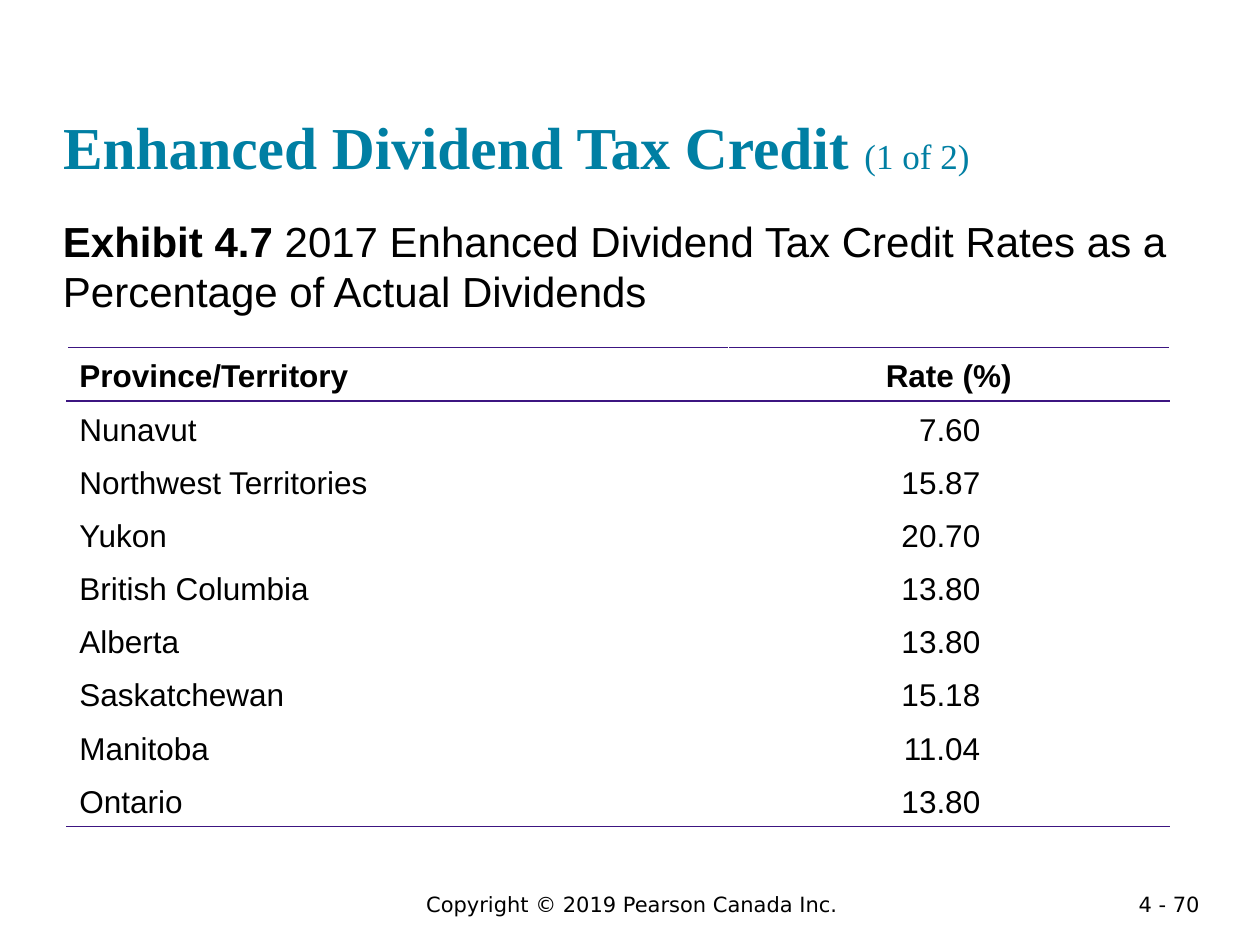
from typing import NamedTuple

import pptx
import pptx.dml.color
import pptx.enum.text
import pptx.oxml
import pptx.oxml.ns
import pptx.util

Inches = pptx.util.Inches
Align = pptx.enum.text.PP_ALIGN
Anchor = pptx.enum.text.MSO_ANCHOR

BLACK, TEAL, PURPLE = "000000", "007FA3", "3C1581"
MARGINS = ("margin_left", "margin_top", "margin_right", "margin_bottom")


class Rate(NamedTuple):
    region: str
    percent: float


class TextLine(NamedTuple):
    """A one-paragraph box: (left, top, width, height) in inches and its text."""
    box: tuple[float, float, float, float]
    text: str
    align: Align


RATES = [
    Rate("Nunavut", 7.60),
    Rate("Northwest Territories", 15.87),
    Rate("Yukon", 20.70),
    Rate("British Columbia", 13.80),
    Rate("Alberta", 13.80),
    Rate("Saskatchewan", 15.18),
    Rate("Manitoba", 11.04),
    Rate("Ontario", 13.80),
]
FOOTERS = [
    TextLine((1.64, 7.03, 6.75, 0.3), "Copyright © 2019 Pearson Canada Inc.", Align.CENTER),
    TextLine((8.62, 7.03, 1, 0.22), "4 - 70", Align.RIGHT),
]


def add_run(paragraph, text: str, size: float, font: str, color: str, bold: bool = False) -> None:
    run = paragraph.add_run()
    run.text = text
    formats = {"size": pptx.util.Pt(size), "name": font, "bold": bold}
    for key, value in formats.items():
        setattr(run.font, key, value)
    run.font.color.rgb = pptx.dml.color.RGBColor.from_string(color)


def prepare_frame(frame, anchor: Anchor) -> None:
    """Give a text frame wrapping, no insets and a fixed size."""
    formats = {
        "word_wrap": True,
        "auto_size": pptx.enum.text.MSO_AUTO_SIZE.NONE,
        "vertical_anchor": anchor,
        **dict.fromkeys(MARGINS, 0),
    }
    for key, value in formats.items():
        setattr(frame, key, value)


def add_footer(slide, footer: TextLine) -> None:
    frame = slide.shapes.add_textbox(*map(Inches, footer.box)).text_frame
    frame.word_wrap = True
    frame.paragraphs[0].alignment = footer.align
    add_run(frame.paragraphs[0], footer.text, 12, "DejaVu Sans", BLACK)


def add_border(cell, side: str) -> None:
    """Rule one side of a cell: T for top, B for bottom."""
    cell._tc.get_or_add_tcPr().append(pptx.oxml.parse_xml(
        f'<a:ln{side} {pptx.oxml.ns.nsdecls("a")} w="12700"><a:solidFill>'
        f'<a:srgbClr val="{PURPLE}"/></a:solidFill></a:ln{side}>'))


def fill_cell(cell, text: str, align: Align, borders: str, bold: bool) -> None:
    for side in borders:
        add_border(cell, side)
    cell.fill.background()
    if align == Align.RIGHT:
        cell.margin_right = Inches(1.5)
    paragraph = cell.text_frame.paragraphs[0]
    paragraph.alignment = align
    paragraph.line_spacing = 1.15
    add_run(paragraph, text, 18, "Arial", BLACK, bold)


def add_rate_table(slide, rates: list[Rate]) -> None:
    row_count = len(rates) + 1
    row_height = 0.41
    table = slide.shapes.add_table(
        row_count, 2, Inches(0.53), Inches(2.76), Inches(8.75), Inches(row_height * row_count)).table
    table.horz_banding = table.first_row = False
    for column, width in zip(table.columns, (5.25, 3.5)):
        column.width = Inches(width)
    for row in table.rows:
        row.height = Inches(row_height)

    borders = {0: "TB", 1: "T", row_count - 1: "B"}
    lines = [("Province/Territory", "Rate (%)")]
    lines += [(rate.region, f"{rate.percent:.2f}") for rate in rates]
    for index, (region, percent) in enumerate(lines):
        header = index == 0
        sides = borders.get(index, "")
        fill_cell(table.cell(index, 0), region, Align.LEFT, sides, header)
        fill_cell(table.cell(index, 1), percent, Align.CENTER if header else Align.RIGHT, sides, header)


def main() -> None:
    deck = pptx.Presentation()
    deck.slide_width, deck.slide_height = Inches(10), Inches(7.5)
    slide = deck.slides.add_slide(deck.slide_layouts.get_by_name("Title Only"))

    title = slide.shapes.title
    title.left, title.top, title.width, title.height = map(Inches, (0.5, 0.24, 9, 1.2))
    prepare_frame(title.text_frame, Anchor.BOTTOM)
    heading = title.text_frame.paragraphs[0]
    heading.alignment = Align.LEFT
    add_run(heading, "Enhanced Dividend Tax Credit ", 34, "Times New Roman", TEAL, bold=True)
    add_run(heading, "(1 of 2)", 20, "Times New Roman", TEAL)

    caption = slide.shapes.add_textbox(*map(Inches, (0.5, 1.71, 9, 0.82))).text_frame
    prepare_frame(caption, Anchor.TOP)
    add_run(caption.paragraphs[0], "Exhibit 4.7 ", 24, "Arial", BLACK, bold=True)
    add_run(caption.paragraphs[0],
            "2017 Enhanced Dividend Tax Credit Rates as a Percentage of Actual Dividends",
            24, "Arial", BLACK)

    add_rate_table(slide, RATES)
    for footer in FOOTERS:
        add_footer(slide, footer)
    deck.save("out.pptx")


if __name__ == "__main__":
    main()
